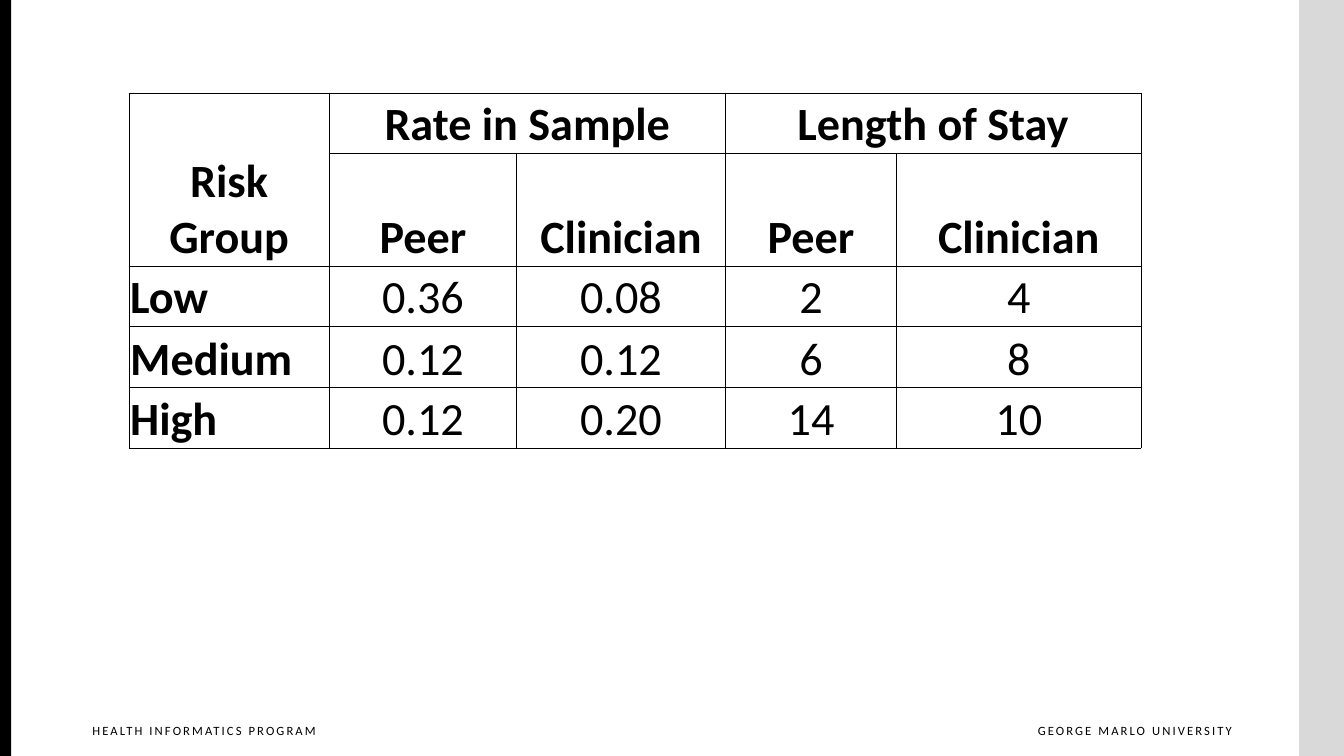
from lxml.etree import SubElement
from pptx import Presentation
from pptx.dml.color import RGBColor
from pptx.enum.shapes import MSO_SHAPE
from pptx.enum.text import MSO_ANCHOR, PP_ALIGN
from pptx.oxml.ns import qn
from pptx.util import Cm, Pt

COLORS = {"black": "000000", "white": "FFFFFF", "gray": "D9D9D9"}
FONT = "Calibri"


def style(par, size, bold=False):
    for run in par.runs:
        run.font.name = FONT
        run.font.size = Pt(size)
        run.font.bold = bold
        run.font.color.rgb = RGBColor.from_string(COLORS["black"])


def add_border(cell):
    """Draw a thin black line on all four sides of a table cell."""
    props = cell._tc.get_or_add_tcPr()
    for side in ("lnL", "lnR", "lnT", "lnB"):
        line = SubElement(props, qn(f"a:{side}"), w=str(Pt(0.5)))
        fill = SubElement(line, qn("a:solidFill"))
        SubElement(fill, qn("a:srgbClr"), val=COLORS["black"])


prs = Presentation()
prs.slide_width, prs.slide_height = Cm(33.87), Cm(19.05)
slide = prs.slides.add_slide(prs.slide_layouts[6])
shapes = slide.shapes

# Side bands
for left, width, color in ((32.74, 1.13, "gray"), (0, 0.28, "black")):
    band = shapes.add_shape(MSO_SHAPE.RECTANGLE, Cm(left), 0,
                            Cm(width), prs.slide_height)
    band.shadow.inherit = False
    band.fill.solid()
    band.fill.fore_color.rgb = RGBColor.from_string(COLORS[color])
    band.line.fill.background()

# Footers
footers = (
    ("GEORGE MARLO UNIVERSITY", 25.07, 5.97, PP_ALIGN.RIGHT),
    ("HEALTH INFORMATICS PROGRAM", 2.08, 6.45, PP_ALIGN.LEFT),
)
for text, left, width, align in footers:
    box = shapes.add_textbox(Cm(left), Cm(17.98), Cm(width), Cm(0.84))
    frame = box.text_frame
    frame.word_wrap = True
    frame.vertical_anchor = MSO_ANCHOR.MIDDLE
    frame.margin_right = 0
    frame.text = text
    par = frame.paragraphs[0]
    par.alignment = align
    style(par, 9)
    par.runs[0].font._element.set("spc", "150")

# Table of risk groups
rows = (
    ("Risk Group", "Rate in Sample", "", "Length of Stay", ""),
    ("", "Peer", "Clinician", "Peer", "Clinician"),
    ("Low", "0.36", "0.08", "2", "4"),
    ("Medium", "0.12", "0.12", "6", "8"),
    ("High", "0.12", "0.20", "14", "10"),
)
widths = (5.05, 4.72, 5.26, 4.32, 6.15)
heights = (1.52, 2.84, 1.52, 1.55, 1.52)
frame = shapes.add_table(len(rows), len(widths), Cm(3.25), Cm(2.34),
                         Cm(sum(widths)), Cm(sum(heights)))
table = frame.table
for col, width in zip(table.columns, widths):
    col.width = Cm(width)
for row, height in zip(table.rows, heights):
    row.height = Cm(height)

for r, row in enumerate(rows):
    for c, text in enumerate(row):
        cell = table.cell(r, c)
        cell.margin_left = cell.margin_right = cell.margin_top = Cm(0.03)
        cell.margin_bottom = 0
        cell.vertical_anchor = MSO_ANCHOR.BOTTOM
        add_border(cell)
        cell.fill.solid()
        cell.fill.fore_color.rgb = RGBColor.from_string(COLORS["white"])
        cell.text = text
        par = cell.text_frame.paragraphs[0]
        head = r < 2
        label = c == 0 and not head
        par.alignment = PP_ALIGN.LEFT if label else PP_ALIGN.CENTER
        style(par, 33, bold=head or label)

for first, last in (((0, 0), (1, 0)), ((0, 1), (0, 2)), ((0, 3), (0, 4))):
    table.cell(*first).merge(table.cell(*last))

prs.save("out.pptx")
